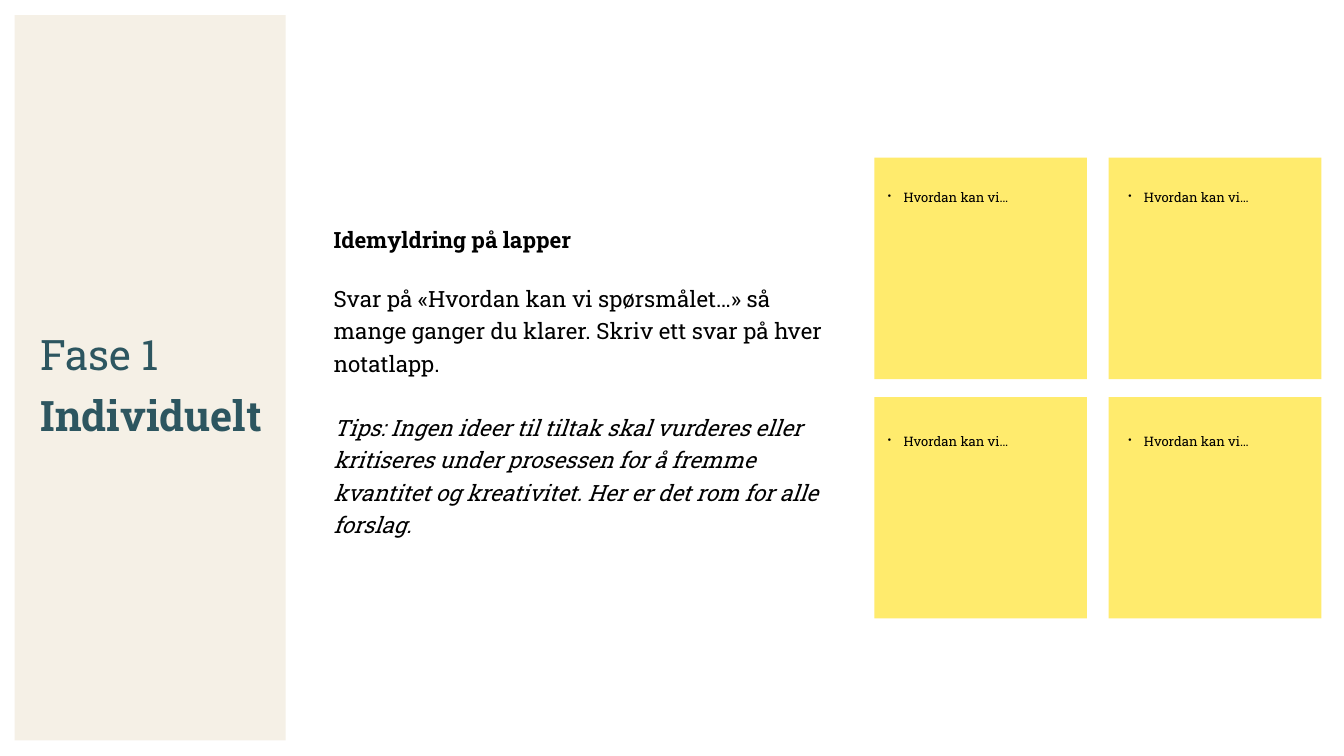
from itertools import product
from lxml.etree import SubElement
from pptx import Presentation
from pptx.dml.color import RGBColor
from pptx.enum.shapes import MSO_SHAPE as Shape
from pptx.enum.text import MSO_ANCHOR as Anchor, MSO_AUTO_SIZE as AutoSize
from pptx.oxml.ns import qn
from pptx.util import Inches, Pt

deck = Presentation()
deck.slide_width, deck.slide_height = Inches(26.67), Inches(15)
slide = deck.slides.add_slide(deck.slide_layouts[6])
COL, ROW = deck.slide_width / 100, deck.slide_height / 100


def panel(left, top, width, height, color):
    rect = slide.shapes.add_shape(
        Shape.RECTANGLE, int(left * COL), int(top * ROW), int(width * COL), int(height * ROW))
    rect.shadow.inherit = False
    rect.fill.solid()
    rect.fill.fore_color.rgb = RGBColor.from_string(color)
    rect.line.fill.background()


def write(left, top, width, height, lines, size, color, spacing=1.0):
    frame = slide.shapes.add_textbox(
        int(left * COL), int(top * ROW), int(width * COL), int(height * ROW)).text_frame
    frame.word_wrap = True
    frame.vertical_anchor = Anchor.MIDDLE
    for number, (text, bold, italic, after) in enumerate(lines):
        paragraph = frame.add_paragraph() if number else frame.paragraphs[0]
        paragraph.line_spacing = spacing
        paragraph.space_after = Pt(after)
        run = paragraph.add_run()
        run.text = text
        run.font.name, run.font.size = "Roboto Slab", Pt(size)
        run.font.bold, run.font.italic = bold, italic
        run.font.color.rgb = RGBColor.from_string(color)
    return frame


panel(1.09, 2, 20.17, 95.93, "F5F0E6")
phase = [("Fase 1", False, False, 0), ("Individuelt", True, False, 0)]
write(2.66, 12.47, 18.6, 75.4, phase, 60, "2D5660", 1.2)

for row, col in product(range(2), repeat=2):
    panel(65.05 + col * 17.44, 20.87 + row * 31.67, 15.82, 29.27, "FFEB6D")

for row, col in product(range(2), repeat=2):
    idea = write(65.84 + col * 17.89, 23.47 + row * 32.27, 9.41, 5.27,
                 [("Hvordan kan vi…", False, False, 0)], 18.7, "000000")
    idea.word_wrap = False
    idea.auto_size = AutoSize.SHAPE_TO_FIT_TEXT
    idea.margin_left = idea.margin_right = idea.margin_top = idea.margin_bottom = Inches(0.06)
    bullet = idea.paragraphs[0]._p.get_or_add_pPr()
    bullet.set("marL", str(Inches(0.31)))
    bullet.set("indent", str(-Inches(0.31)))
    SubElement(bullet, qn("a:buSzPct")).set("val", "73000")
    SubElement(bullet, qn("a:buChar")).set("char", "•")

instructions = [
    ("Idemyldring på lapper", True, False, 38),
    ("Svar på «Hvordan kan vi spørsmålet…» så mange ganger du klarer. "
     "Skriv ett svar på hver notatlapp.", False, False, 46),
    ("Tips: Ingen ideer til tiltak skal vurderes eller kritiseres under prosessen "
     "for å fremme kvantitet og kreativitet. Her er det rom for alle forslag.", False, True, 0),
]
write(24.45, 19.67, 37.61, 61.07, instructions, 32, "000000", 1.2)

deck.save("out.pptx")
